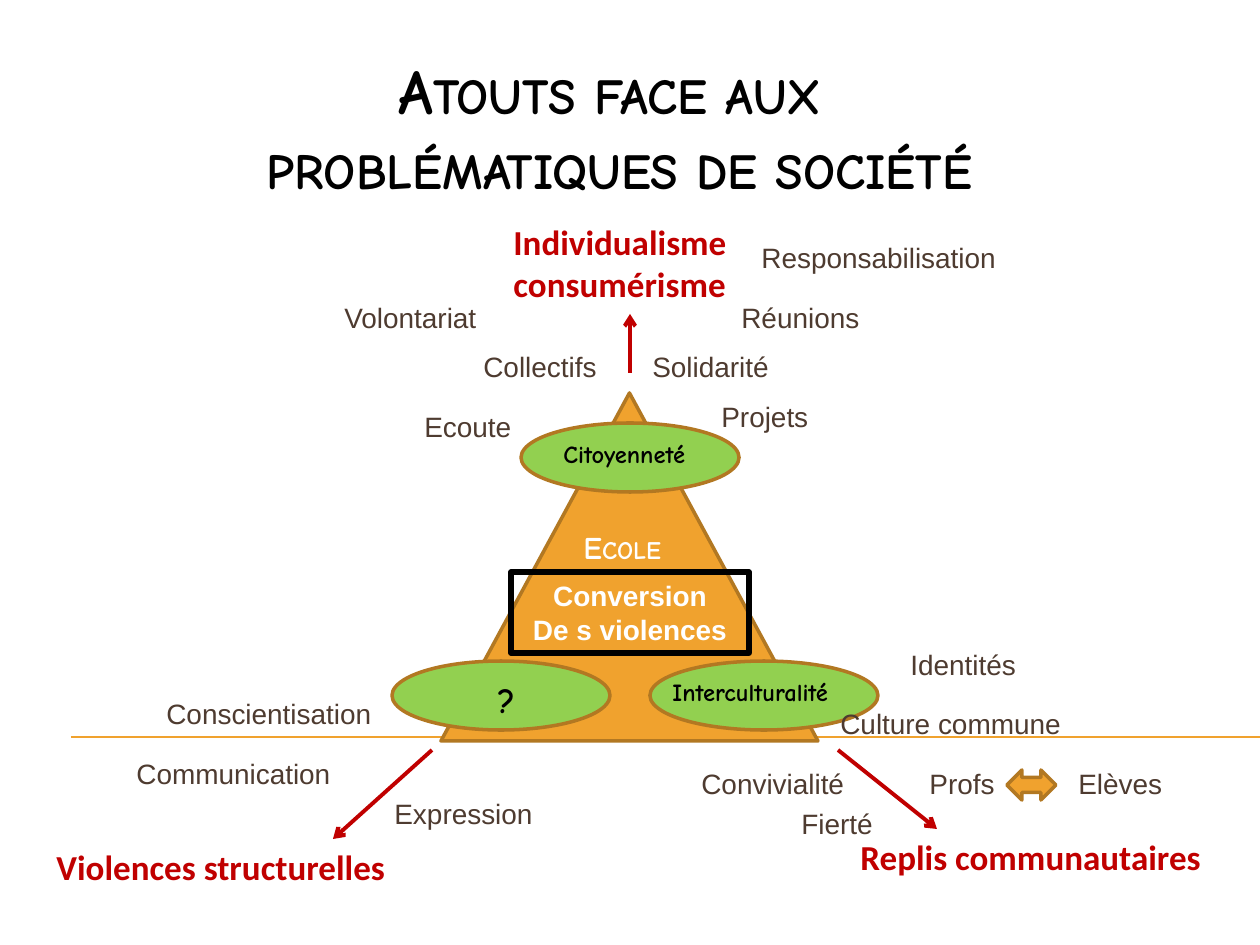
from lxml import etree
from pptx import Presentation
from pptx.dml.color import RGBColor
from pptx.enum.shapes import MSO_CONNECTOR, MSO_SHAPE
from pptx.enum.text import MSO_ANCHOR, PP_ALIGN
from pptx.oxml.ns import qn
from pptx.util import Emu, Pt

EMU_PER_PX = 914400 / 126
CENTER, LEFT = PP_ALIGN.CENTER, PP_ALIGN.LEFT
TOP, MIDDLE = MSO_ANCHOR.TOP, MSO_ANCHOR.MIDDLE
STRAIGHT = MSO_CONNECTOR.STRAIGHT
TRIANGLE, OVAL = MSO_SHAPE.ISOSCELES_TRIANGLE, MSO_SHAPE.OVAL
RECTANGLE, DOUBLE_ARROW = MSO_SHAPE.RECTANGLE, MSO_SHAPE.LEFT_RIGHT_ARROW

ORANGE, BROWN, GREEN = "F0A22E", "B27822", "92D050"
RED, TEXT, BLACK, WHITE = "C00000", "4E3B30", "000000", "FFFFFF"
COMIC = "Comic Neue"

# text, left, top, width
KEYWORDS = [
    ("Conscientisation", 154, 690, 248),
    ("Responsabilisation", 749, 234, 268),
    ("Expression", 382, 790, 168),
    ("Communication", 124, 750, 248),
    ("Fierté", 789, 800, 110),
    ("Culture commune", 828, 700, 258),
    ("Convivialité", 689, 760, 169),
    ("Profs", 917, 760, 110),
    ("Elèves", 1066, 760, 110),
    ("Solidarité", 640, 343, 149),
    ("Collectifs", 471, 343, 149),
    ("Projets", 709, 393, 129),
    ("Ecoute", 412, 403, 149),
    ("Identités", 898, 641, 149),
    ("Réunions", 729, 294, 149),
    ("Volontariat", 332, 294, 179),
]

# text, left, top, width, height
PROBLEMS = [
    ("Individualisme consumérisme", 501, 214, 268, 97),
    ("Replis communautaires", 848, 829, 377, 55),
    ("Violences structurelles", 44, 839, 357, 55),
]

# start, end
PROBLEM_ARROWS = [
    ((630, 373), (630, 314)),
    ((838, 750), (937, 829)),
    ((432, 750), (333, 839)),
]


def px(*values):
    return [Emu(round(v * EMU_PER_PX)) for v in values]


def rgb(hex_color):
    return RGBColor.from_string(hex_color)


def write(sp, text, size, color, font="Arial", bold=False, align=LEFT,
          anchor=TOP, small_caps=False):
    tf = sp.text_frame
    tf.word_wrap = True
    tf.vertical_anchor = anchor
    tf.text = text
    for p in tf.paragraphs:
        p.alignment = align
        for r in p.runs:
            r.font.name = font
            r.font.size = Pt(size)
            r.font.bold = bold
            r.font.color.rgb = rgb(color)
            if small_caps:
                r.font._element.set("cap", "small")


def add_label(slide, text, box, size, color, **style):
    write(slide.shapes.add_textbox(*px(*box)), text, size, color, **style)


def add_shape(slide, kind, box, fill, line, width=2):
    sp = slide.shapes.add_shape(kind, *px(*box))
    sp.shadow.inherit = False
    if fill:
        sp.fill.solid()
        sp.fill.fore_color.rgb = rgb(fill)
    else:
        sp.fill.background()
    sp.line.color.rgb = rgb(line)
    sp.line.width = Pt(width)
    return sp


def add_line(slide, start, end, color, width, arrow=False):
    line = slide.shapes.add_connector(STRAIGHT, *px(*start, *end))
    line.line.color.rgb = rgb(color)
    line.line.width = Pt(width)
    if arrow:
        etree.SubElement(line.line._get_or_add_ln(), qn("a:tailEnd"), type="arrow")
    etree.SubElement(line._element.spPr, qn("a:effectLst"))


def add_title(slide, text, box):
    title = slide.shapes.title
    title.left, title.top, title.width, title.height = px(*box)
    write(title, text, 36, BLACK, font=COMIC, bold=True, align=CENTER,
          small_caps=True)


def add_pole(slide, oval, text, box, size, align=LEFT):
    """Green oval at a corner of the triangle, with its label."""
    add_shape(slide, OVAL, oval, GREEN, BROWN)
    add_label(slide, text, box, size, BLACK, font=COMIC, bold=True, align=align)


def main():
    prs = Presentation()
    prs.slide_width, prs.slide_height = px(1260, 945)
    slide = prs.slides.add_slide(prs.slide_layouts[5])

    add_title(slide, "Atouts face aux \nproblématiques de société",
              (74, 45, 1091, 165))
    add_line(slide, (71, 737), (1260, 737), ORANGE, 0.75)
    add_shape(slide, TRIANGLE, (441, 393, 377, 348), ORANGE, BROWN)
    add_label(slide, "Ecole", (571, 522, 129, 50), 18, WHITE, font=COMIC,
              bold=True, small_caps=True)

    for text, *box in PROBLEMS:
        add_label(slide, text, box, 20, RED, font="Calibri", bold=True)
    for start, end in PROBLEM_ARROWS:
        add_line(slide, start, end, RED, 2.25, arrow=True)

    add_pole(slide, (521, 423, 218, 69), "Citoyenneté", (551, 433, 169, 43), 14)
    add_pole(slide, (650, 661, 228, 69), "Interculturalité",
             (660, 671, 228, 43), 14)
    add_pole(slide, (392, 661, 218, 69), "?", (422, 672, 169, 55), 20, CENTER)

    frame = add_shape(slide, RECTANGLE, (511, 572, 238, 81), None, BLACK, 3)
    write(frame, "Conversion\nDe s violences", 16, WHITE, bold=True,
          align=CENTER, anchor=MIDDLE)

    for text, left, top, width in KEYWORDS:
        add_label(slide, text, (left, top, width, 47), 16, TEXT)
    add_shape(slide, DOUBLE_ARROW, (1007, 770, 49, 30), ORANGE, BROWN)

    prs.save("out.pptx")


if __name__ == "__main__":
    main()
